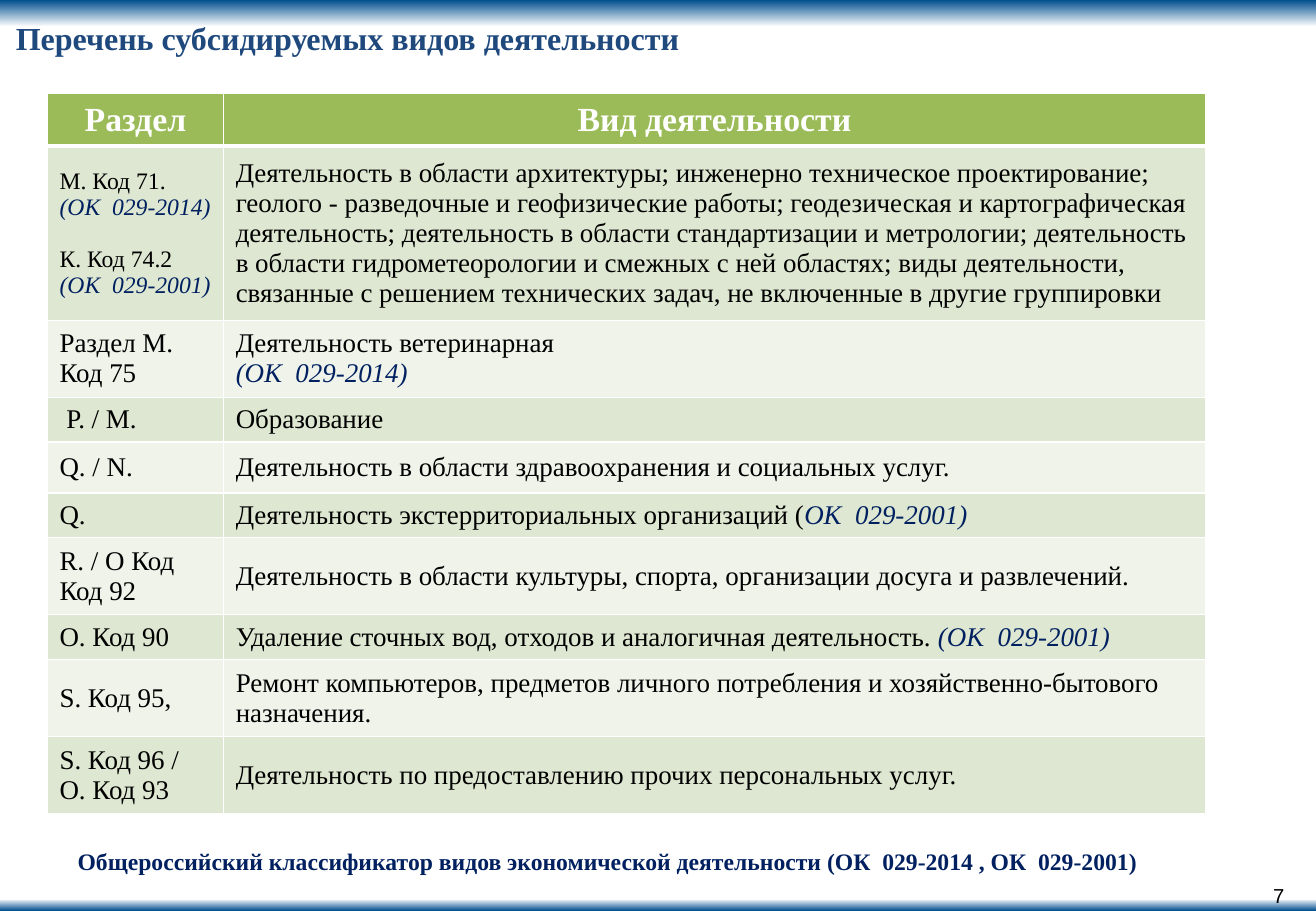
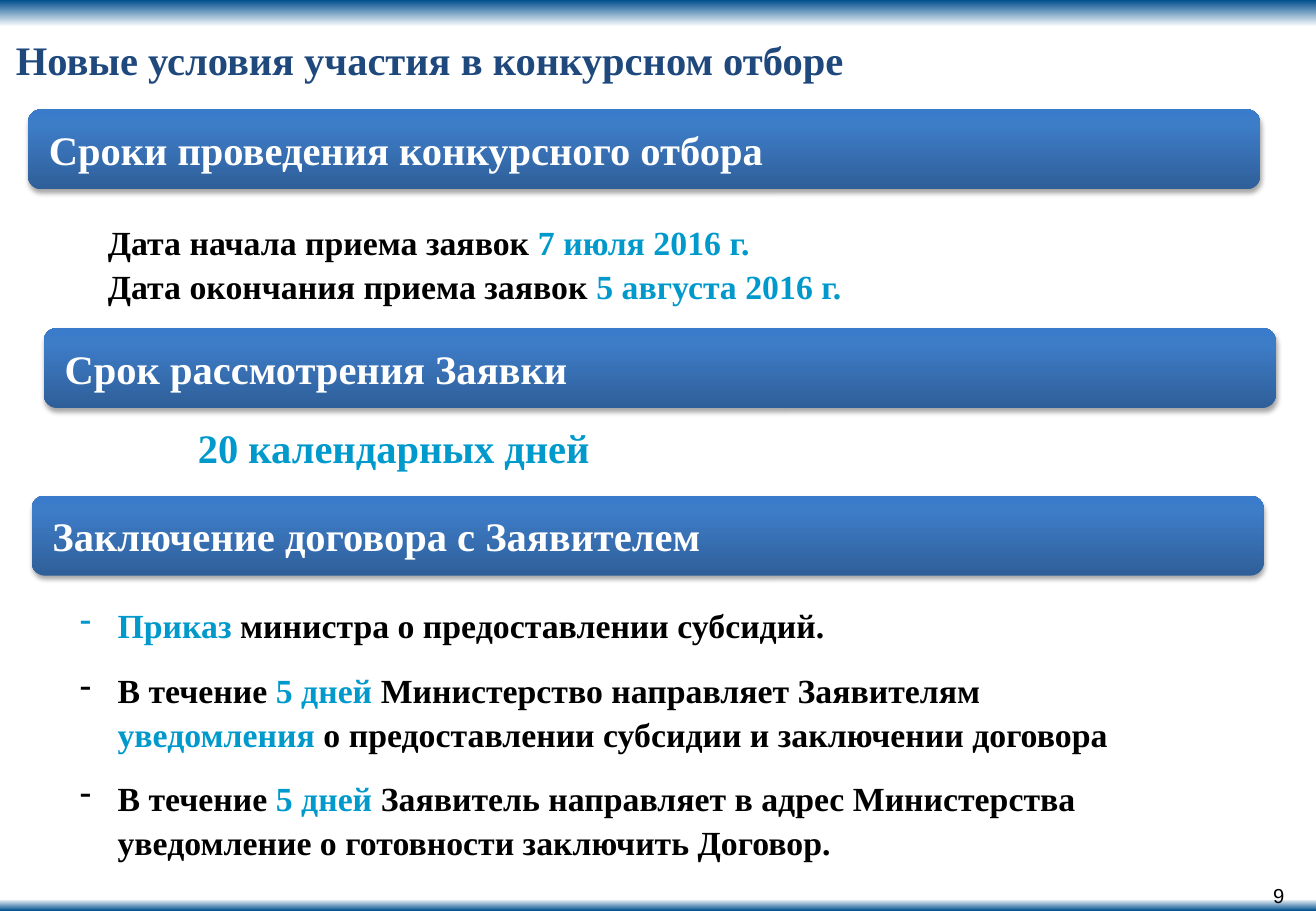
import pptx
import pptx.util
import pptx.dml.color
import pptx.enum.shapes
import pptx.enum.text
import pptx.oxml
import pptx.oxml.ns

Inches, Pt = pptx.util.Inches, pptx.util.Pt
ALIGN = pptx.enum.text.PP_ALIGN
ANCHOR = pptx.enum.text.MSO_ANCHOR
SHAPE = pptx.enum.shapes.MSO_SHAPE
WIDTH, HEIGHT = 10.83, 7.5
COLORS = {
    "band": "004E8E", "white": "FFFFFF", "black": "000000",
    "title": "1F497D", "navy": "002060", "accent": "0099CC",
    "bar_dark": "2F5F99", "bar_mid": "3D7CC7", "bar_light": "3A7CCB",
    "head": "9BBB59", "row_odd": "DEE7D1", "row_even": "EFF3EA",
}


def rgb(name):
    return pptx.dml.color.RGBColor.from_string(COLORS[name])


def xml(tag, body):
    ns = pptx.oxml.ns.nsdecls("a")
    return pptx.oxml.parse_xml(f"<a:{tag} {ns} {body}")


class Deck:
    """Slide style and the slide being built."""

    def __init__(self):
        self.prs = pptx.Presentation()
        self.prs.slide_width = Inches(WIDTH)
        self.prs.slide_height = Inches(HEIGHT)
        self.s = None

    def slide(self, title, number, top, size):
        self.s = self.prs.slides.add_slide(self.prs.slide_layouts[6])
        self.shape(SHAPE.RECTANGLE, 0, 7.4, WIDTH, 0.1, 90,
                   [(0, "band"), (100, "white")])
        self.shape(SHAPE.RECTANGLE, 0, 0, WIDTH, 0.22, 270,
                   [(0, "band"), (100, "white")])
        self.text(0.13, top, 10.11, size / 60, [[title]], size, "title", inset=0)
        self.text(8.31, 7.27, 2.26, 0.2, [[str(number)]], 12, bold=False,
                  font="Arial", align=ALIGN.RIGHT, inset=0)

    def shape(self, kind, x, y, w, h, angle, stops):
        sp = self.s.shapes.add_shape(kind, Inches(x), Inches(y), Inches(w), Inches(h))
        sp.shadow.inherit = False
        sp.line.fill.background()
        sp.fill.gradient()
        sp.fill.gradient_angle = angle
        gs_lst = sp._element.spPr.find(".//" + pptx.oxml.ns.qn("a:gsLst"))
        for gs in list(gs_lst):
            gs_lst.remove(gs)
        for pos, color in stops:
            gs_lst.append(xml("gs", f'pos="{pos * 1000}"><a:srgbClr val="{COLORS[color]}"/></a:gs>'))
        return sp

    def bar(self, x, y, text):
        sp = self.shape(SHAPE.ROUNDED_RECTANGLE, x, y, 10.14, 0.66, 90,
                        [(0, "bar_dark"), (80, "bar_mid"), (100, "bar_light")])
        effects = sp._element.spPr.find(pptx.oxml.ns.qn("a:effectLst"))
        effects.append(xml("outerShdw", (
            f'blurRad="{Pt(3.1)}" dist="{Pt(1.8)}" dir="5400000" rotWithShape="0">'
            '<a:srgbClr val="000000"><a:alpha val="35000"/></a:srgbClr></a:outerShdw>')))
        tf = sp.text_frame
        tf.word_wrap = True
        tf.vertical_anchor = ANCHOR.MIDDLE
        tf.margin_left = tf.margin_right = Inches(0.14)
        self.fill_text(tf, [[text]], 24, "white")

    def text(self, x, y, w, h, paras, size, color="black", inset=None, **style):
        tb = self.s.shapes.add_textbox(Inches(x), Inches(y), Inches(w), Inches(h))
        tf = tb.text_frame
        tf.word_wrap = True
        if inset is not None:
            tf.margin_left = tf.margin_right = Inches(inset)
            tf.margin_top = tf.margin_bottom = Inches(inset)
        self.fill_text(tf, paras, size, color, **style)

    def fill_text(self, tf, paras, size, color="black", bold=True, font="Times New Roman",
                  align=ALIGN.LEFT, gaps=(), spacing=None, bullet=None):
        for i, runs in enumerate(paras):
            p = tf.paragraphs[0] if i == 0 else tf.add_paragraph()
            p.alignment = align
            if spacing:
                p.line_spacing = spacing
            if i and i <= len(gaps):
                p.space_before = Pt(gaps[i - 1])
            if bullet:
                pPr = p._p.get_or_add_pPr()
                pPr.set("marL", str(Inches(0.31)))
                pPr.set("indent", str(-Inches(0.31)))
                pPr.append(xml("buChar", f'char="{bullet}"/>'))
            for run in runs:
                if run == "\n":
                    p.add_line_break()
                    continue
                text, run_color, italic = (run, color, False) if isinstance(run, str) else run
                r = p.add_run()
                r.text = text
                r.font.name = font
                r.font.size = Pt(size)
                r.font.bold = bold
                r.font.italic = italic
                r.font.color.rgb = rgb(run_color)

    def cell(self, cell, paras, fill, last_line=1, **style):
        tcPr = cell._tc.get_or_add_tcPr()
        for side, width in (("L", 1), ("R", 1), ("T", 1), ("B", last_line)):
            tcPr.append(xml(f"ln{side}", (
                f'w="{Pt(width)}"><a:solidFill><a:srgbClr val="{COLORS["white"]}"/>'
                f'</a:solidFill></a:ln{side}>')))
        cell.fill.solid()
        cell.fill.fore_color.rgb = rgb(fill)
        cell.vertical_anchor = ANCHOR.MIDDLE
        self.fill_text(cell.text_frame, paras, **style)

    def table(self, x, y, widths, heights, head, rows):
        tbl = self.s.shapes.add_table(
            len(heights), len(widths), Inches(x), Inches(y),
            Inches(sum(widths)), Inches(sum(heights))).table
        for col, w in zip(tbl.columns, widths):
            col.width = Inches(w)
        for row, h in zip(tbl.rows, heights):
            row.height = Inches(h)
        for c, text in enumerate(head):
            self.cell(tbl.cell(0, c), [[text]], "head", 3, size=20,
                      color="white", align=ALIGN.CENTER)
        for i, row in enumerate(rows, 1):
            for c, paras in enumerate(row):
                small = len(paras) > 2
                self.cell(tbl.cell(i, c), paras, "row_odd" if i % 2 else "row_even",
                          size=14 if small else 16, bold=False,
                          gaps=(0, 15.5) if small else ())


def note(text):
    return text, "navy", True


def accent(text):
    return text, "accent", False


def main():
    deck = Deck()

    deck.slide("Перечень субсидируемых видов деятельности", 7, 0.15, 19)
    rows = [
        ([["M. Код 71."], [note("(ОК  029-2014)")], ["К. Код 74.2"], [note("(ОК  029-2001)")]],
         [["Деятельность в области архитектуры; инженерно техническое проектирование; "
           "геолого - разведочные и геофизические работы; геодезическая и картографическая "
           "деятельность; деятельность в области стандартизации и метрологии; деятельность "
           "в области гидрометеорологии и смежных с ней областях; виды деятельности, "
           "связанные с решением технических задач, не включенные в другие группировки"]]),
        ([["Раздел M. Код 75"]],
         [["Деятельность ветеринарная"], [note("(ОК  029-2014)")]]),
        ([[" P. / M."]], [["Образование"]]),
        ([["Q. / N."]], [["Деятельность в области здравоохранения и социальных услуг."]]),
        ([["Q."]],
         [["Деятельность экстерриториальных организаций (", note("ОК  029-2001)")]]),
        ([["R. / О Код Код 92"]],
         [["Деятельность в области культуры, спорта, организации досуга и развлечений."]]),
        ([["О. Код 90"]],
         [["Удаление сточных вод, отходов и аналогичная деятельность. ",
           note("(ОК  029-2001)")]]),
        ([["S. Код 95,"]],
         [["Ремонт компьютеров, предметов личного потребления и хозяйственно-бытового "
           "назначения."]]),
        ([["S. Код 96 /"], ["О. Код 93"]],
         [["Деятельность по предоставлению прочих персональных услуг."]]),
    ]
    deck.table(0.39, 0.77, [1.45, 8.08],
               [0.42, 1.43, 0.63, 0.37, 0.42, 0.36, 0.63, 0.37, 0.63, 0.63],
               ["Раздел", "Вид деятельности"], rows)
    deck.text(0.54, 6.92, 9.23, 0.34,
              [["Общероссийский классификатор видов экономической деятельности "
                "(ОК  029-2014 , ОК  029-2001)"]], 14, "navy")

    deck.slide("Новые условия участия в конкурсном отборе", 9, 0.29, 24)
    for x, y, text in (
        (0.23, 0.9, "Сроки проведения конкурсного отбора"),
        (0.36, 2.7, "Срок рассмотрения Заявки"),
        (0.26, 4.08, "Заключение договора с Заявителем"),
    ):
        deck.bar(x, y, text)
    deck.text(0.79, 1.75, 7.76, 0.77, [
        ["Дата начала приема заявок ", accent("7 июля 2016 г.")],
        ["Дата окончания приема заявок ", accent("5 августа 2016 г.")],
    ], 20, spacing=1.08)
    deck.text(1.53, 3.43, 3.46, 0.5, [["20 календарных дней"]], 24, "accent")
    deck.text(0.56, 4.9, 9.84, 2.47, [
        [accent("Приказ "), "министра о предоставлении субсидий."],
        ["В течение ", accent("5 дней "), "Министерство направляет Заявителям ", "\n",
         accent("уведомления"), " о предоставлении субсидии и заключении договора"],
        ["В течение ", accent("5 дней "),
         "Заявитель направляет в адрес Министерства уведомление о готовности "
         "заключить Договор."],
    ], 20, gaps=(13, 12), spacing=1.08, bullet="-")

    deck.prs.save("out.pptx")


if __name__ == "__main__":
    main()
